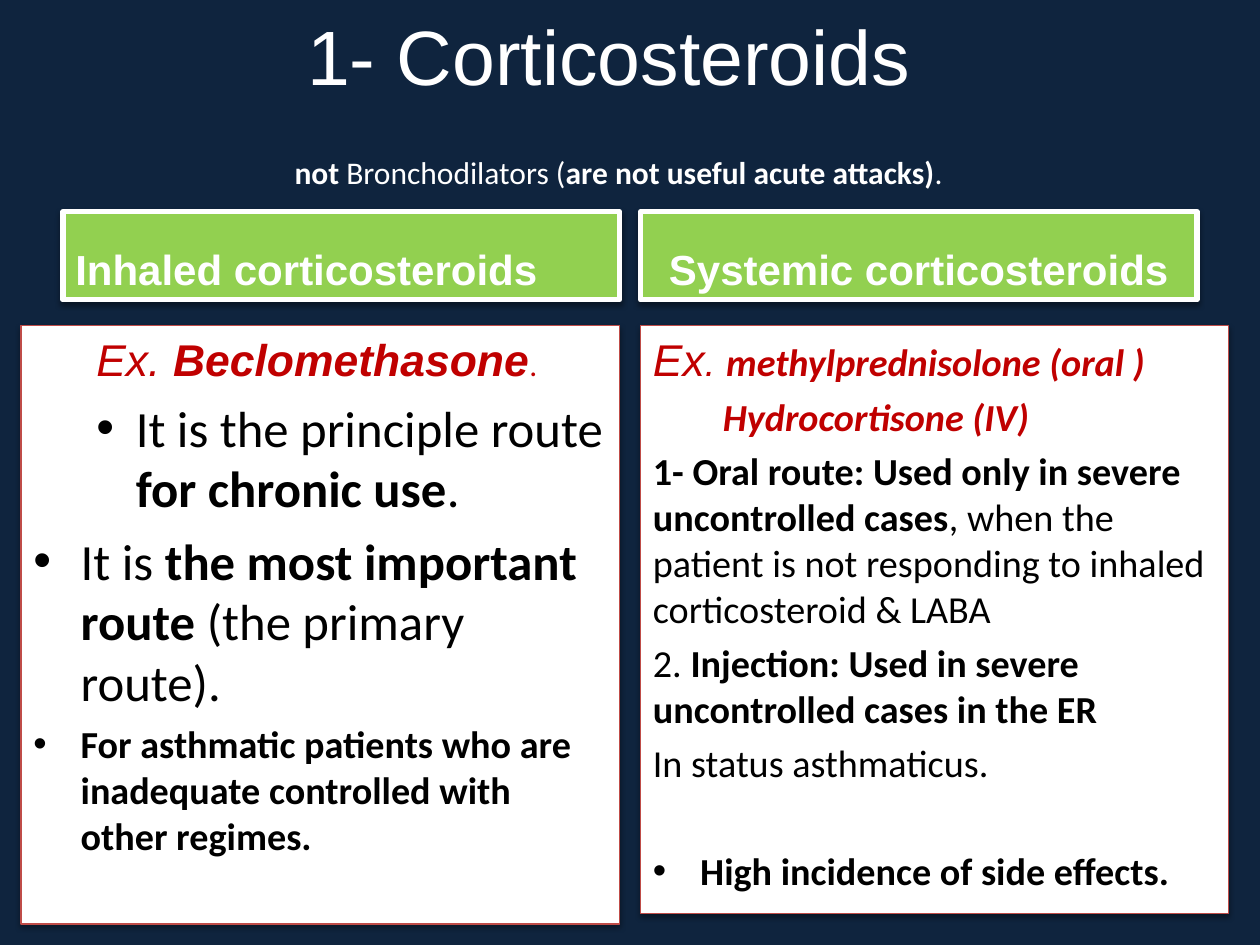
from dataclasses import dataclass, field
from typing import Any

from lxml.etree import SubElement
from pptx import Presentation
from pptx.dml.color import RGBColor
from pptx.enum.shapes import MSO_SHAPE
from pptx.enum.text import MSO_ANCHOR, PP_ALIGN
from pptx.oxml.ns import qn
from pptx.util import Pt


@dataclass(frozen=True)
class Theme:
    navy: str = "0F243E"
    green: str = "92D050"
    white: str = "FFFFFF"
    black: str = "000000"
    red: str = "C00000"
    border: str = "BF4C48"
    heading_font: str = "Arial"
    body_font: str = "Calibri"
    title: float = 44
    spacer: float = 48
    subtitle: float = 18
    header: float = 24
    example: float = 25.4
    large: float = 29
    body: float = 21.8
    space_ratio: float = 0.22


THEME = Theme()


@dataclass(frozen=True)
class Span:
    text: str
    size: float = THEME.body
    bold: bool = False
    italic: bool = False
    color: str = THEME.black
    font: str = THEME.body_font


@dataclass(frozen=True)
class Para:
    spans: list[Span]
    margin: float = 0
    indent: float = 0
    bullet: bool = False
    align: Any = PP_ALIGN.LEFT
    before: float | None = None


@dataclass(frozen=True)
class Panel:
    left: float
    top: float
    width: float
    height: float
    fill: str
    line: str
    weight: float
    anchor: Any
    paras: list[Para] = field(default_factory=list)


def set_all(target: Any, values: dict[str, Any]) -> None:
    for name, value in values.items():
        setattr(target, name, value)


def add_span(para: Any, span: Span) -> None:
    run = para.add_run()
    run.text = span.text
    set_all(run.font, {"size": Pt(span.size), "bold": span.bold,
                       "italic": span.italic, "name": span.font})
    run.font.color.rgb = RGBColor.from_string(span.color)


def fill_text(frame: Any, paras: list[Para], anchor: Any) -> None:
    set_all(frame, {"word_wrap": True, "vertical_anchor": anchor})
    for index, item in enumerate(paras):
        para = frame.paragraphs[0] if index == 0 else frame.add_paragraph()
        before = item.before
        if before is None:
            before = round(item.spans[0].size * THEME.space_ratio, 1)
        set_all(para, {"alignment": item.align, "space_before": Pt(before)})
        properties = para._p.get_or_add_pPr()
        properties.set("marL", str(Pt(item.margin)))
        properties.set("indent", str(Pt(item.indent)))
        if item.bullet:
            SubElement(properties, qn("a:buFont"), typeface="Arial")
            SubElement(properties, qn("a:buChar"), char="•")
        for span in item.spans:
            add_span(para, span)


def add_soft_shadow(shape: Any) -> None:
    shape.shadow.inherit = False
    effects = shape._element.spPr.find(qn("a:effectLst"))
    shadow = SubElement(effects, qn("a:outerShdw"), blurRad=str(Pt(3.1)),
                        dist=str(Pt(1.6)), dir="5400000", rotWithShape="0")
    color = SubElement(shadow, qn("a:srgbClr"), val=THEME.black)
    SubElement(color, qn("a:alpha"), val="38000")


def add_panel(page: Any, panel: Panel) -> None:
    shape = page.shapes.add_shape(
        MSO_SHAPE.RECTANGLE, Pt(panel.left), Pt(panel.top), Pt(panel.width), Pt(panel.height))
    shape.fill.solid()
    shape.fill.fore_color.rgb = RGBColor.from_string(panel.fill)
    shape.line.color.rgb = RGBColor.from_string(panel.line)
    shape.line.width = Pt(panel.weight)
    add_soft_shadow(shape)
    fill_text(shape.text_frame, panel.paras, panel.anchor)


def header(left: float, text: str, align: Any) -> Panel:
    span = Span(text, THEME.header, True, False, THEME.white, THEME.heading_font)
    return Panel(left, 121, 318, 50.4, THEME.green, THEME.white, 3,
                 MSO_ANCHOR.BOTTOM, [Para([span], align=align)])


def content(left: float, width: float, height: float, paras: list[Para]) -> Panel:
    return Panel(left, 186, width, height, THEME.white, THEME.border, 0.75,
                 MSO_ANCHOR.TOP, paras)


def example(text: str, size: float = THEME.example, bold: bool = False,
            font: str = THEME.heading_font) -> Span:
    return Span(text, size, bold, True, THEME.red, font)


def add_title(page: Any) -> None:
    box = page.shapes.add_textbox(Pt(0), Pt(0), Pt(696), Pt(120))
    heading = Span("1- Corticosteroids", THEME.title, color=THEME.white, font=THEME.heading_font)
    fill_text(box.text_frame, [Para([heading], align=PP_ALIGN.CENTER, before=0)],
              MSO_ANCHOR.MIDDLE)
    para = box.text_frame.paragraphs[0]
    para.add_line_break()
    add_span(para, Span(" ", THEME.spacer))
    for text, bold in (("not", True), (" Bronchodilators (", False),
                       ("are not useful acute attacks)", True), (".", False)):
        add_span(para, Span(text, THEME.subtitle, bold, color=THEME.white))


INHALED = [
    Para([example("Ex. "), example("Beclomethasone", bold=True),
          Span(".", THEME.subtitle, color=THEME.red)], 60, -24),
    Para([Span("It is the principle route ", THEME.large),
          Span("for chronic use", THEME.large, True), Span(".", THEME.large)],
         58.5, -22.5, True),
    Para([Span("It is ", THEME.large), Span("the most important route ", THEME.large, True),
          Span("(the primary route).", THEME.large)], 27, -27, True),
    Para([Span("For asthmatic patients who are inadequate controlled with other regimes.",
               bold=True)], 27, -27, True),
]

SYSTEMIC = [
    Para([example("Ex"), example(". ", THEME.body),
          example("methylprednisolone (oral )", THEME.body, True, THEME.body_font)], 27, -27),
    Para([example("Hydrocortisone (IV)", THEME.body, True, THEME.body_font)], 40),
    Para([Span("1- Oral route: Used only in severe uncontrolled cases", bold=True),
          Span(", when the patient is not responding to inhaled corticosteroid & LABA")]),
    Para([Span("2. "),
          Span("Injection: Used in severe uncontrolled cases in the ER", bold=True)]),
    Para([Span("In status asthmaticus.")]),
    Para([Span("High incidence of side effects.", bold=True)], 27, -27, True, before=35.7),
]


def main() -> None:
    deck = Presentation()
    set_all(deck, {"slide_width": Pt(720), "slide_height": Pt(540)})
    page = deck.slides.add_slide(deck.slide_layouts[6])
    page.background.fill.solid()
    page.background.fill.fore_color.rgb = RGBColor.from_string(THEME.navy)
    add_title(page)
    for panel in (header(36, "Inhaled corticosteroids", PP_ALIGN.LEFT),
                  content(12, 342, 342, INHALED),
                  header(366, "Systemic corticosteroids", PP_ALIGN.CENTER),
                  content(366, 336, 336, SYSTEMIC)):
        add_panel(page, panel)
    deck.save("out.pptx")


if __name__ == "__main__":
    main()
